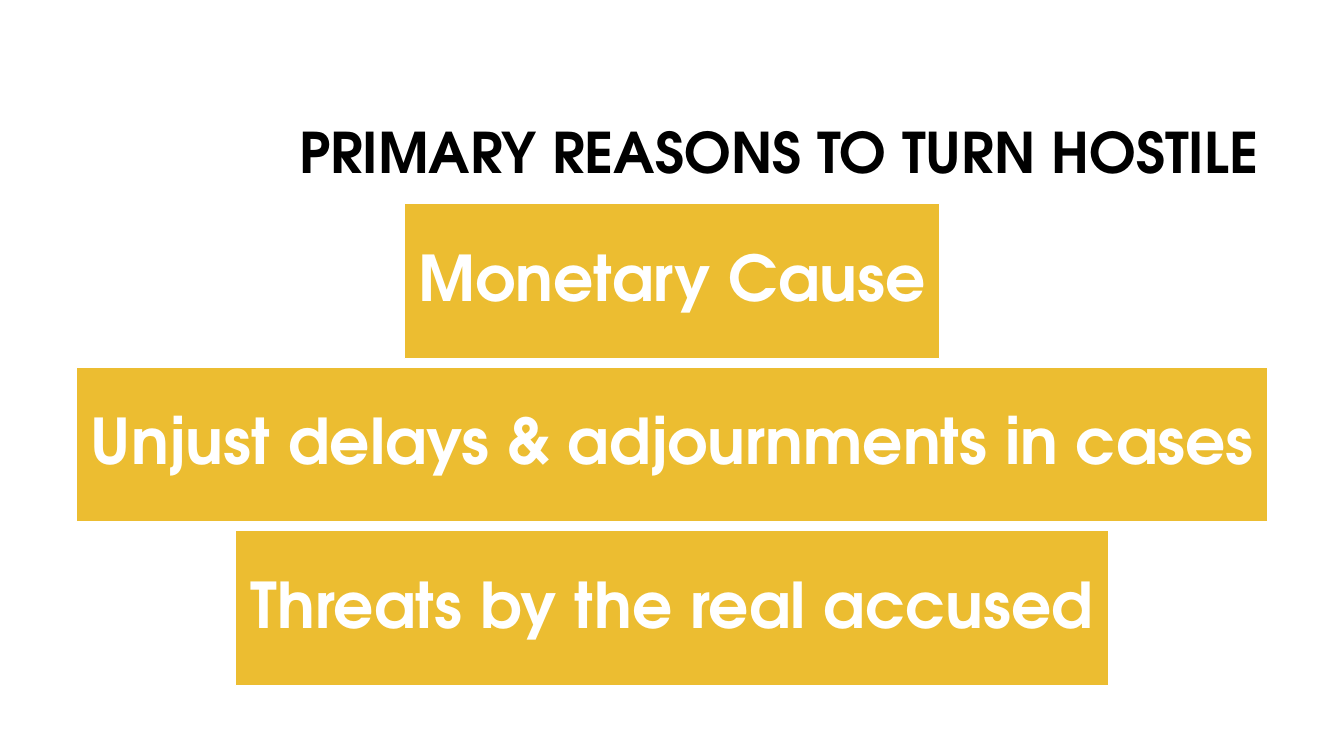
from dataclasses import dataclass

from pptx import Presentation
from pptx import util as u
from pptx.dml.color import RGBColor
from pptx.enum import shapes, text

FONT = "TeX Gyre Adventor"
COLORS = {"black": "000000", "white": "FFFFFF", "gold": "ECBD31"}
SLIDE_W, SLIDE_H = u.Inches(13.33), u.Inches(7.5)
FIRST_BAR_TOP, BAR_PITCH, BAR_HEIGHT = 26.93, 21.6, 20.53


@dataclass(frozen=True)
class Reason:
    label: str
    width: float


REASONS = [
    Reason("Monetary Cause", 39.83),
    Reason("Unjust delays & adjournments in cases", 88.6),
    Reason("Threats by the real accused", 64.97),
]


def across(percent: float) -> int:
    return round(SLIDE_W * percent / 100)


def down(percent: float) -> int:
    return round(SLIDE_H * percent / 100)


def color(name: str) -> RGBColor:
    return RGBColor.from_string(COLORS[name])


def write(sp, content: str, *, size: float, ink: str, align, wrap: bool) -> None:
    tf = sp.text_frame
    tf.word_wrap = wrap
    tf.vertical_anchor = text.MSO_ANCHOR.MIDDLE
    p = tf.paragraphs[0]
    p.alignment = align
    p.line_spacing = 0.9
    r = p.add_run()
    r.text = content
    r.font.name = FONT
    r.font.size = u.Pt(size)
    r.font.bold = True
    r.font.color.rgb = color(ink)


def add_title(s, content: str) -> None:
    sp = s.shapes.add_textbox(across(12.75), down(11.2), across(81.62), down(18.8))
    write(sp, content, size=40, ink="black", align=text.PP_ALIGN.RIGHT, wrap=True)


def add_reason(s, reason: Reason, row: int) -> None:
    sp = s.shapes.add_shape(
        shapes.MSO_SHAPE.RECTANGLE,
        across((100 - reason.width) / 2),
        down(FIRST_BAR_TOP + row * BAR_PITCH),
        across(reason.width),
        down(BAR_HEIGHT),
    )
    sp.shadow.inherit = False
    sp.fill.solid()
    sp.fill.fore_color.rgb = color("gold")
    sp.line.color.rgb = color("white")
    sp.line.width = u.Pt(1)
    tf = sp.text_frame
    tf.margin_left = tf.margin_right = across(0.9)
    tf.margin_top = tf.margin_bottom = down(1.6)
    write(sp, reason.label, size=45, ink="white", align=text.PP_ALIGN.CENTER, wrap=False)


def main() -> None:
    prs = Presentation()
    prs.slide_width, prs.slide_height = SLIDE_W, SLIDE_H
    s = prs.slides.add_slide(prs.slide_layouts[6])
    add_title(s, "PRIMARY REASONS TO TURN HOSTILE")
    for row, reason in enumerate(REASONS):
        add_reason(s, reason, row)
    prs.save("out.pptx")


if __name__ == "__main__":
    main()
